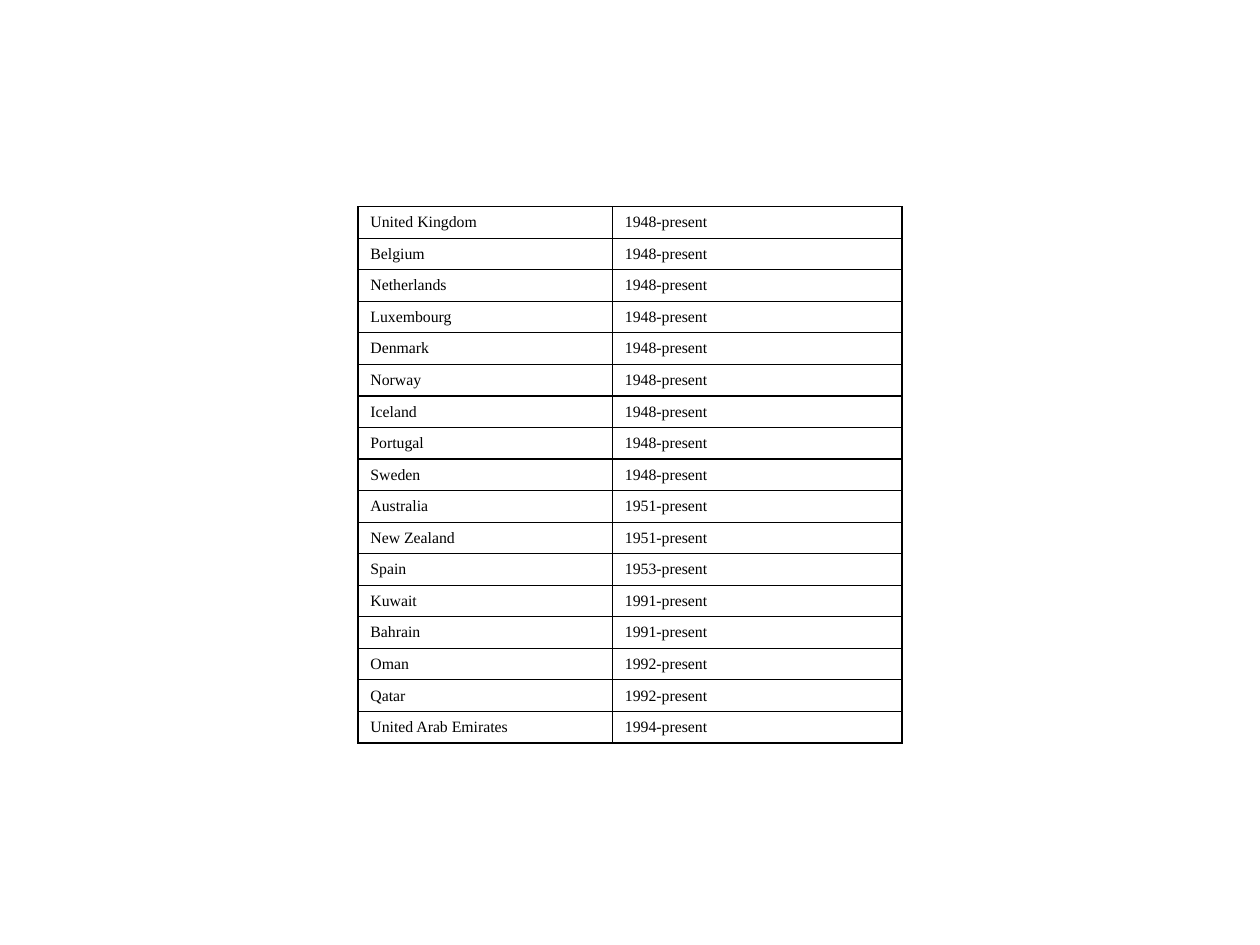
from lxml import etree
from pptx import Presentation, util as u
from pptx.dml.color import RGBColor
from pptx.enum import text
from pptx.oxml import ns

BLACK = RGBColor(0x00, 0x00, 0x00)
THIN, THICK = u.Pt(0.75), u.Pt(1)
SLIDE_WIDTH, SLIDE_HEIGHT = u.Inches(10), u.Inches(7.5)
COUNTRY_SHARE = 2.02 / 4.32
FONT_FORMAT = {"name": "Times New Roman", "size": u.Pt(9), "bold": False}

COUNTRIES_BY_START = {
    1948: ["United Kingdom", "Belgium", "Netherlands", "Luxembourg", "Denmark",
           "Norway", "Iceland", "Portugal", "Sweden"],
    1951: ["Australia", "New Zealand"],
    1953: ["Spain"],
    1991: ["Kuwait", "Bahrain"],
    1992: ["Oman", "Qatar"],
    1994: ["United Arab Emirates"],
}


def set_borders(cell, widths):
    """Draw a solid black line on each side; widths maps L, R, T, B to a width."""
    properties = cell._tc.get_or_add_tcPr()
    for side, width in widths.items():
        line = etree.SubElement(properties, ns.qn(f"a:ln{side}"), w=str(width))
        fill = etree.SubElement(line, ns.qn("a:solidFill"))
        etree.SubElement(fill, ns.qn("a:srgbClr"), val=str(BLACK))


def write_cell(cell, wording):
    cell.vertical_anchor = text.MSO_ANCHOR.MIDDLE
    cell.fill.background()
    run = cell.text_frame.paragraphs[0].add_run()
    run.text = wording
    for attribute, value in FONT_FORMAT.items():
        setattr(run.font, attribute, value)
    run.font.color.rgb = BLACK


def add_membership_table(slide, left, top, width, height):
    """List each country with its years, framed by thicker outer lines."""
    memberships = [(country, f"{start}-present")
                   for start, countries in COUNTRIES_BY_START.items()
                   for country in countries]
    last_row = len(memberships) - 1
    table = slide.shapes.add_table(len(memberships), 2, left, top, width, height).table
    table.first_row = table.horz_banding = False
    country_column, years_column = table.columns
    country_column.width = int(width * COUNTRY_SHARE)
    years_column.width = width - country_column.width

    for row, membership in enumerate(memberships):
        for column, wording in enumerate(membership):
            cell = table.cell(row, column)
            set_borders(cell, {
                "L": THICK if column == 0 else THIN,
                "R": THICK if column == 1 else THIN,
                "T": THIN,
                "B": THICK if row == last_row else THIN,
            })
            write_cell(cell, wording)


def main():
    deck = Presentation()
    deck.slide_width, deck.slide_height = SLIDE_WIDTH, SLIDE_HEIGHT
    slide = deck.slides.add_slide(deck.slide_layouts.get_by_name("Blank"))
    width = int(SLIDE_WIDTH * 0.432)
    add_membership_table(slide, (SLIDE_WIDTH - width) // 2, u.Inches(1.64),
                         width, u.Inches(4.26))
    deck.save("out.pptx")


if __name__ == "__main__":
    main()
